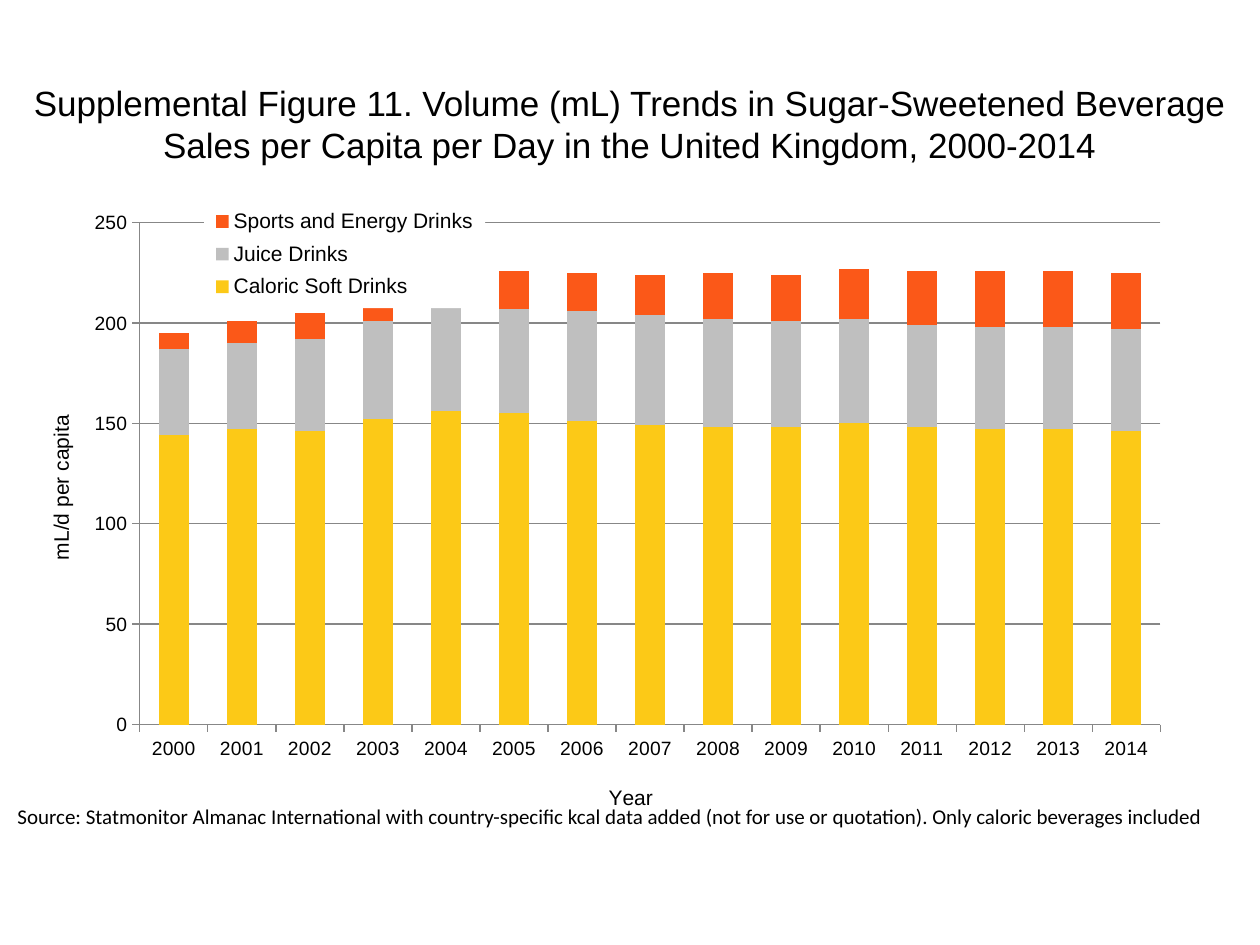
from dataclasses import dataclass

from lxml import etree
from pptx import Presentation
from pptx.chart.data import CategoryChartData
from pptx.dml.color import RGBColor
from pptx.enum.chart import XL_CHART_TYPE, XL_LEGEND_POSITION, XL_TICK_MARK
from pptx.enum.text import MSO_ANCHOR, PP_ALIGN
from pptx.oxml import parse_xml
from pptx.oxml.ns import nsdecls, qn
from pptx.util import Pt

STACKED = XL_CHART_TYPE.COLUMN_STACKED
RIGHT = XL_LEGEND_POSITION.RIGHT
OUTSIDE = XL_TICK_MARK.OUTSIDE
NO_TICK = XL_TICK_MARK.NONE
MIDDLE, TOP = MSO_ANCHOR.MIDDLE, MSO_ANCHOR.TOP
CENTER, LEFT = PP_ALIGN.CENTER, PP_ALIGN.LEFT


@dataclass(frozen=True)
class Theme:
    text: RGBColor = RGBColor(0, 0, 0)
    line: RGBColor = RGBColor(0x87, 0x87, 0x87)
    soft: RGBColor = RGBColor(0xFC, 0xC9, 0x17)
    juice: RGBColor = RGBColor(0xBF, 0xBF, 0xBF)
    sports: RGBColor = RGBColor(0xFB, 0x58, 0x18)
    heading: str = "Arial"
    body: str = "Calibri"
    title_size: int = 20
    label_size: int = 12
    tick_size: int = 11


THEME = Theme()
SERIES = [
    ("Caloric Soft Drinks", THEME.soft,
     [144, 147, 146, 152, 156, 155, 151, 149, 148, 148, 150, 148, 147, 147, 146]),
    ("Juice Drinks", THEME.juice,
     [43, 43, 46, 49, 53, 52, 55, 55, 54, 53, 52, 51, 51, 51, 51]),
    ("Sports and Energy Drinks", THEME.sports,
     [8, 11, 13, 14, 17, 19, 19, 20, 23, 23, 25, 27, 28, 28, 28]),
]


def set_font(font, size, name=THEME.heading):
    font.size, font.name, font.bold = Pt(size), name, False
    font.color.rgb = THEME.text


def set_layout(parent, index, **fractions):
    """Place a chart part by fractions of the chart's width and height."""
    for old in parent.findall(qn("c:layout")):
        parent.remove(old)
    layout = etree.Element(qn("c:layout"))
    manual = etree.SubElement(layout, qn("c:manualLayout"))
    if index == 0:
        etree.SubElement(manual, qn("c:layoutTarget")).set("val", "inner")
    for axis in "xy":
        etree.SubElement(manual, qn(f"c:{axis}Mode")).set("val", "edge")
    for key, value in fractions.items():
        etree.SubElement(manual, qn(f"c:{key}")).set("val", str(value))
    parent.insert(index, layout)


prs = Presentation()
prs.slide_width, prs.slide_height = Pt(720), Pt(540)
s = prs.slides.add_slide(prs.slide_layouts[6])

# Stacked columns
data = CategoryChartData(number_format="#,##0")
data.categories = [str(year) for year in range(2000, 2015)]
for name, _, values in SERIES:
    data.add_series(name, values)
chart = s.shapes.add_chart(STACKED, Pt(0), Pt(66), Pt(720), Pt(444), data).chart
chart.has_title = False
set_font(chart.font, 10, THEME.body)
set_layout(chart._chartSpace.chart.plotArea, 0, x=0.111, y=0.138, w=0.81, h=0.646)

plot = chart.plots[0]
plot.gap_width, plot.overlap = 125, 100
plot.vary_by_categories = False
for series, (_, color, _) in zip(plot.series, SERIES):
    series.format.fill.solid()
    series.format.fill.fore_color.rgb = color

# Axes
for axis, title, x, y in [
    (chart.category_axis, "Year", 0.48, 0.857),
    (chart.value_axis, "mL/d per capita", 0.035, 0.381),
]:
    axis.major_tick_mark, axis.minor_tick_mark = OUTSIDE, NO_TICK
    axis.format.line.color.rgb = THEME.line
    set_font(axis.tick_labels.font, THEME.tick_size)
    tf = axis.axis_title.text_frame
    tf.text = title
    set_font(tf.paragraphs[0].font, THEME.label_size)
    set_layout(axis.axis_title._element, 1, x=x, y=y)

value_axis = chart.value_axis
value_axis.axis_title.text_frame._txBody.bodyPr.set("rot", "-5400000")
value_axis.minimum_scale, value_axis.maximum_scale, value_axis.major_unit = 0, 250, 50
value_axis.tick_labels.number_format = "#,##0"
value_axis.tick_labels.number_format_is_linked = False
value_axis.major_gridlines.format.line.color.rgb = THEME.line

# Legend on a white panel over the plot
chart.has_legend = True
legend = chart.legend
legend.position = RIGHT
legend.include_in_layout = False
set_font(legend.font, THEME.label_size)
set_layout(legend._element, 1, x=0.162, y=0.109, w=0.223, h=0.139)
legend._element.find(qn("c:overlay")).addnext(parse_xml(
    f'<c:spPr {nsdecls("c", "a")}><a:solidFill><a:srgbClr val="FFFFFF"/>'
    "</a:solidFill><a:ln><a:noFill/></a:ln></c:spPr>"))

# Title and source note
for text, box, anchor, align, size, font in [
    ("Supplemental Figure 11. Volume (mL) Trends in Sugar-Sweetened Beverage "
     "Sales per Capita per Day in the United Kingdom, 2000-2014",
     (0, 29.5, 720, 82), MIDDLE, CENTER, THEME.title_size, THEME.heading),
    ("Source: Statmonitor Almanac International with country-specific kcal data "
     "added (not for use or quotation). Only caloric beverages included",
     (2.9, 455.8, 711.4, 21.8), TOP, LEFT, THEME.label_size, THEME.body),
]:
    tf = s.shapes.add_textbox(*map(Pt, box)).text_frame
    tf.word_wrap, tf.vertical_anchor = True, anchor
    p = tf.paragraphs[0]
    p.text, p.alignment = text, align
    set_font(p.font, size, font)

prs.save("out.pptx")
